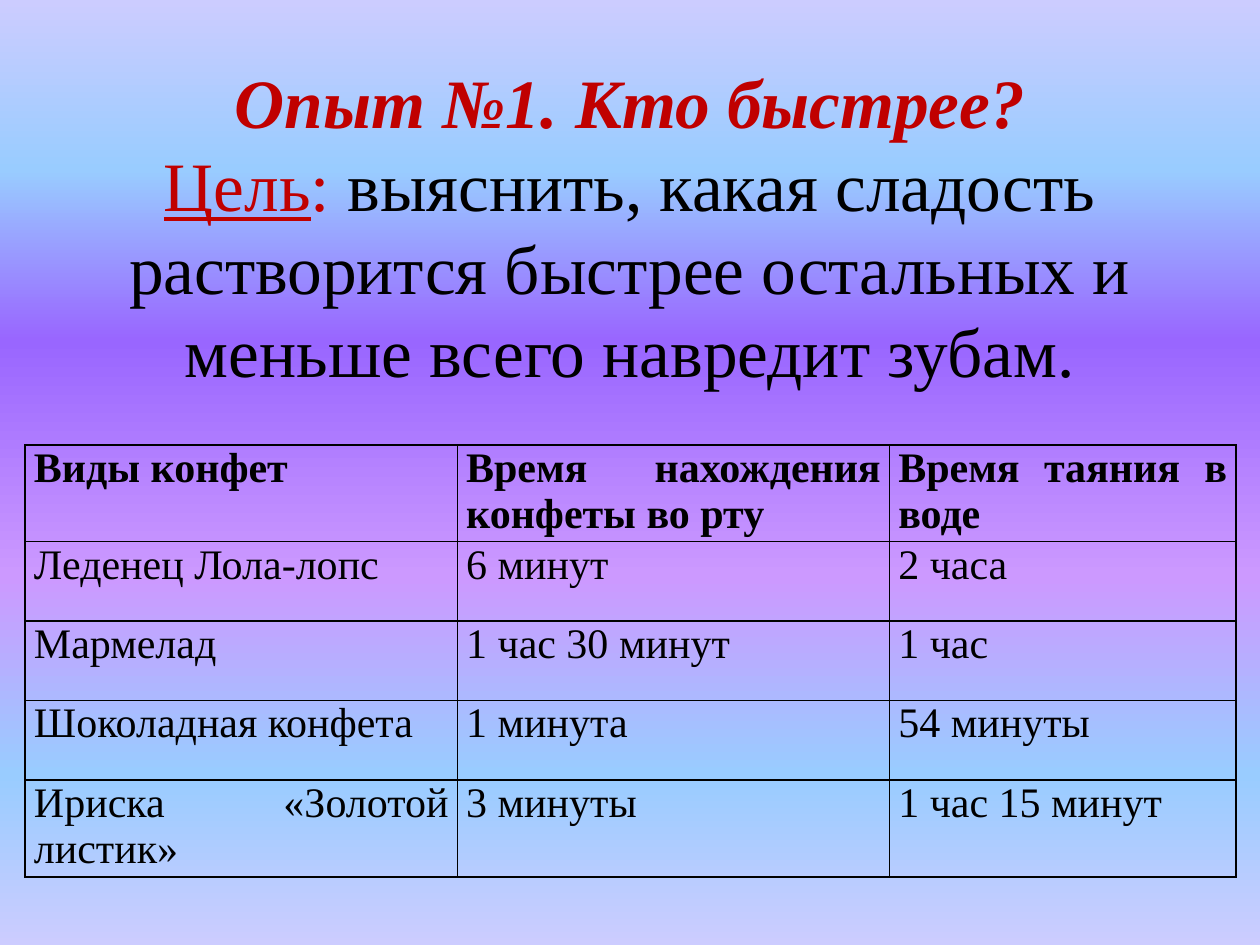
from copy import deepcopy

from lxml import etree
from pptx import Presentation
from pptx.dml.color import RGBColor
from pptx.enum.text import MSO_ANCHOR, MSO_AUTO_SIZE, PP_ALIGN
from pptx.oxml import parse_xml
from pptx.oxml.ns import nsdecls, qn
from pptx.util import Inches, Pt

FONT = "Times New Roman"
BLACK, RED = "000000", "C00000"
GRADIENT = [(0, "CCCCFF"), (18, "99CCFF"), (36, "9966FF"),
            (61, "CC99FF"), (82, "99CCFF"), (100, "CCCCFF")]

HEADING = "Опыт №1. Кто быстрее?"
GOAL = [
    ("Цель", dict(color=RED, underline=True)),
    (": ", dict(color=RED)),
    ("выяснить, какая сладость растворится быстрее остальных "
     "и меньше всего навредит зубам.", {}),
]
TITLE_SIZE, TABLE_SIZE = 39.6, 24

ROWS = [
    ("Виды конфет", "Время нахождения конфеты во рту", "Время таяния в воде"),
    ("Леденец Лола-лопс", "6 минут", "2 часа "),
    ("Мармелад", "1 час 30 минут", "1 час"),
    ("Шоколадная конфета", "1 минута", "54 минуты"),
    ("Ириска «Золотой листик»", "3 минуты", "1 час 15 минут"),
]
COL_WIDTHS = [3.43, 3.43, 2.75]
ROW_HEIGHTS = [0.77, 0.63, 0.63, 0.63, 0.77]


def rgb(color):
    return RGBColor.from_string(color)


def add_text(p, text, size, color=BLACK, bold=False, italic=False, underline=False):
    r = p.add_run()
    r.text = text
    f = r.font
    f.name, f.size, f.color.rgb = FONT, Pt(size), rgb(color)
    f.bold, f.italic, f.underline = bold, italic, underline
    return r


def set_background(s):
    fill = s.background.fill
    fill.gradient()
    fill.gradient_angle = 270
    stops = s.background._cSld.find(".//" + qn("a:gsLst"))
    for stop in list(stops):
        stops.remove(stop)
    for pos, color in GRADIENT:
        gs = etree.SubElement(stops, qn("a:gs"), pos=str(pos * 1000))
        etree.SubElement(gs, qn("a:srgbClr"), val=color)


def add_borders(cell, color=BLACK, width=1):
    tc_pr = cell._tc.get_or_add_tcPr()
    for side in "LRTB":
        tc_pr.append(parse_xml(
            f'<a:ln{side} {nsdecls("a")} w="{Pt(width)}"><a:solidFill>'
            f'<a:srgbClr val="{color}"/></a:solidFill></a:ln{side}>'))


def fill_title(title):
    title.left, title.top = Inches(0.5), Inches(0.3)
    title.width, title.height = Inches(9), Inches(2.98)
    tf = title.text_frame
    tf.word_wrap, tf.auto_size = True, MSO_AUTO_SIZE.NONE
    tf.vertical_anchor = MSO_ANCHOR.MIDDLE
    p = tf.paragraphs[0]
    p.alignment = PP_ALIGN.CENTER
    r = add_text(p, HEADING, TITLE_SIZE, color=RED, bold=True, italic=True)
    p.add_line_break()
    # The break takes the heading's format so that it keeps the line height.
    p._p.find(qn("a:br")).append(deepcopy(r._r.rPr))
    for text, style in GOAL:
        add_text(p, text, TITLE_SIZE, **style)


def add_results(s):
    table = s.shapes.add_table(
        len(ROWS), len(COL_WIDTHS), Inches(0.2), Inches(3.53),
        Inches(sum(COL_WIDTHS)), Inches(sum(ROW_HEIGHTS))).table
    table.horz_banding = table.first_row = False
    for col, width in zip(table.columns, COL_WIDTHS):
        col.width = Inches(width)
    for i, (row, height, texts) in enumerate(zip(table.rows, ROW_HEIGHTS, ROWS)):
        row.height = Inches(height)
        for cell, text in zip(row.cells, texts):
            cell.margin_left = cell.margin_right = Inches(0.07)
            cell.margin_top = cell.margin_bottom = 0
            add_borders(cell)
            cell.fill.background()
            p = cell.text_frame.paragraphs[0]
            p.alignment = PP_ALIGN.JUSTIFY
            add_text(p, text, TABLE_SIZE, bold=i == 0)


def main():
    prs = Presentation()
    prs.slide_width, prs.slide_height = Inches(10), Inches(7.5)
    s = prs.slides.add_slide(prs.slide_layouts[5])
    set_background(s)
    fill_title(s.shapes.title)
    add_results(s)
    prs.save("out.pptx")


if __name__ == "__main__":
    main()
